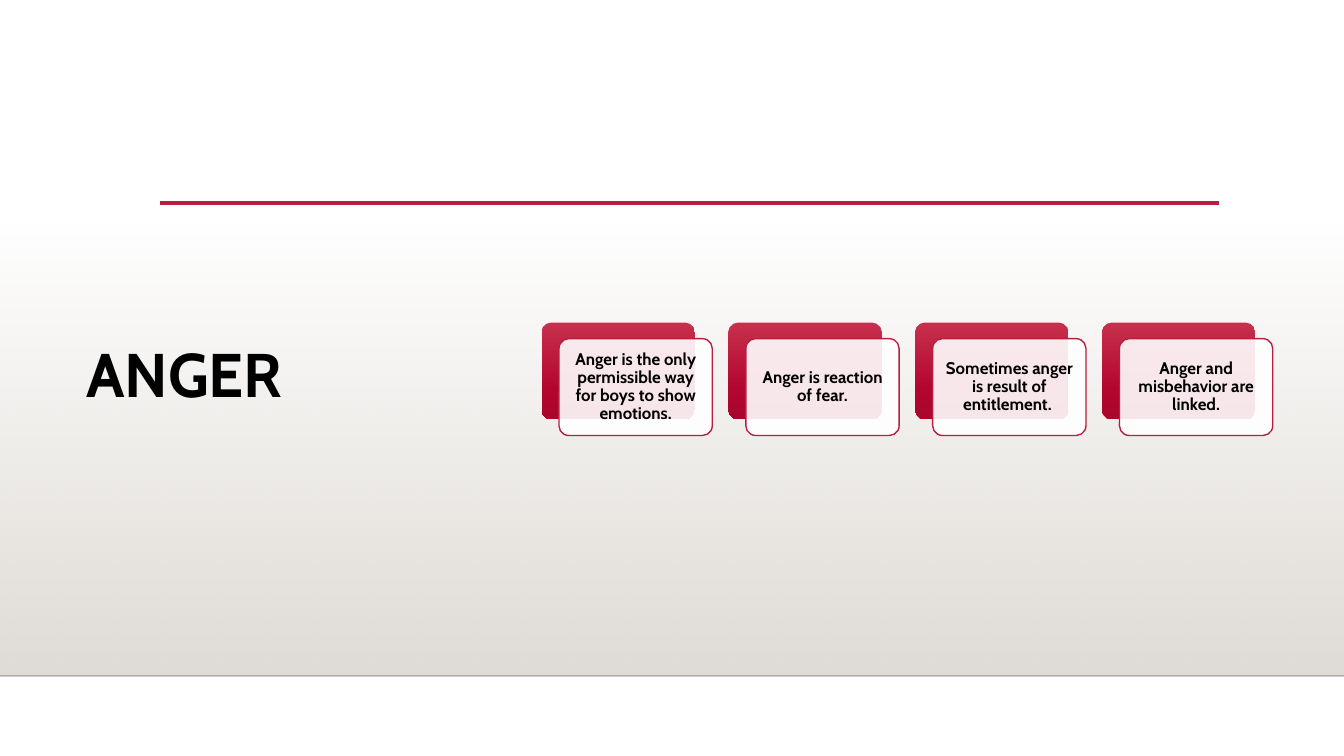
from dataclasses import dataclass

from lxml.etree import SubElement
from pptx import Presentation
from pptx.dml.color import RGBColor
from pptx.enum.shapes import MSO_CONNECTOR, MSO_SHAPE
from pptx.enum.text import MSO_ANCHOR, MSO_AUTO_SIZE, PP_ALIGN
from pptx.oxml.ns import qn
from pptx.util import Inches, Pt


@dataclass(frozen=True)
class Theme:
    font: str = "Cabin"
    title_size: float = 33
    card_size: float = 9
    ink: str = "000000"
    paper: str = "FFFFFF"
    accent: str = "B71E42"
    floor_line: str = "000001"
    # Gradient stops: position, colour, opacity (position and opacity in percent)
    haze: tuple = ((0, "DFDBD5", 0), (100, "DFDBD5", 100))
    crimson: tuple = ((0, "C7304C", 100), (69, "B3062F", 100), (100, "AA062C", 100))


def set_opacity(colour, percent):
    SubElement(colour, qn("a:alpha")).set("val", str(percent * 1000))


def write_text(frame, text, *, theme, size, align, anchor, inset):
    """Fill a text frame with one bold paragraph."""
    frame.word_wrap = True
    frame.auto_size = MSO_AUTO_SIZE.NONE
    frame.vertical_anchor = anchor
    frame.margin_left = frame.margin_right = Inches(inset)
    frame.margin_top = frame.margin_bottom = Inches(0.04)
    paragraph = frame.paragraphs[0]
    paragraph.alignment = align
    paragraph.line_spacing = 0.9
    run = paragraph.add_run()
    run.text = text
    run.font.name = theme.font
    run.font.size = Pt(size)
    run.font.bold = True
    run.font.color.rgb = RGBColor.from_string(theme.ink)


class SlideBuilder:
    def __init__(self, slide, theme):
        self.slide = slide
        self.theme = theme

    def title(self, text, left, top, width, height):
        heading = self.slide.shapes.title
        heading.left, heading.top = Inches(left), Inches(top)
        heading.width, heading.height = Inches(width), Inches(height)
        write_text(heading.text_frame, text, theme=self.theme,
                   size=self.theme.title_size, align=PP_ALIGN.LEFT,
                   anchor=MSO_ANCHOR.MIDDLE, inset=0.1)
        # Bring the heading in front of the backdrop
        self.slide.shapes._spTree.append(heading._element)

    def block(self, kind, left, top, width, height):
        block = self.slide.shapes.add_shape(
            kind, Inches(left), Inches(top), Inches(width), Inches(height))
        block.shadow.inherit = False
        block.line.fill.background()
        if kind == MSO_SHAPE.ROUNDED_RECTANGLE:
            block.adjustments[0] = 0.1
        return block

    def gradient_block(self, kind, stops, left, top, width, height):
        block = self.block(kind, left, top, width, height)
        block.fill.gradient()
        block.fill.gradient_angle = 270  # top to bottom
        stop_list = block._element.spPr.find(qn("a:gradFill")).find(qn("a:gsLst"))
        for stop in list(stop_list):
            stop_list.remove(stop)
        for position, colour, opacity in stops:
            stop = SubElement(stop_list, qn("a:gs"))
            stop.set("pos", str(position * 1000))
            tint = SubElement(stop, qn("a:srgbClr"))
            tint.set("val", colour)
            if opacity < 100:
                set_opacity(tint, opacity)

    def card(self, text, left, top, width, height):
        card = self.block(MSO_SHAPE.ROUNDED_RECTANGLE, left, top, width, height)
        card.fill.solid()
        card.fill.fore_color.rgb = RGBColor.from_string(self.theme.paper)
        set_opacity(next(card._element.spPr.find(qn("a:solidFill")).iterchildren()), 90)
        card.line.color.rgb = RGBColor.from_string(self.theme.accent)
        card.line.width = Pt(0.75)
        write_text(card.text_frame, text, theme=self.theme,
                   size=self.theme.card_size, align=PP_ALIGN.CENTER,
                   anchor=MSO_ANCHOR.MIDDLE, inset=0.04)

    def rule(self, left, right, y, colour, weight, opacity=100):
        rule = self.slide.shapes.add_connector(
            MSO_CONNECTOR.STRAIGHT, Inches(left), Inches(y), Inches(right), Inches(y))
        rule.line.color.rgb = RGBColor.from_string(colour)
        rule.line.width = Pt(weight)
        properties = rule._element.spPr
        if opacity < 100:
            set_opacity(next(properties.iter(qn("a:srgbClr"))), opacity)
        SubElement(properties, qn("a:effectLst"))


def main():
    theme = Theme()
    deck = Presentation()
    # Widescreen, 16:9
    deck.slide_width, deck.slide_height = Inches(10), Inches(10 * 9 / 16)
    builder = SlideBuilder(deck.slides.add_slide(deck.slide_layouts[5]), theme)

    # Backdrop and rules
    builder.gradient_block(MSO_SHAPE.RECTANGLE, theme.haze, 0, 1.66, 10, 3.37)
    builder.rule(0, 10, 5.03, theme.floor_line, 1, opacity=20)
    builder.rule(1.19, 9.07, 1.51, theme.accent, 2.5)

    # Heading
    builder.title("ANGER", 0.54, 1.13, 2.91, 3.36)

    # Row of cards, each in front of an offset crimson plate
    statements = (
        "Anger is the only permissible way for boys to show emotions.",
        "Anger is reaction of fear.",
        "Sometimes anger is result of entitlement. ",
        "Anger and misbehavior are linked.",
    )
    first_left, top, pitch = 4.03, 2.4, 1.39
    width, height = 1.14, 0.72
    for index, statement in enumerate(statements):
        left = first_left + index * pitch
        builder.gradient_block(MSO_SHAPE.ROUNDED_RECTANGLE, theme.crimson,
                               left, top, width, height)
        builder.card(statement, left + 0.13, top + 0.12, width, height)

    deck.save("out.pptx")


if __name__ == "__main__":
    main()
